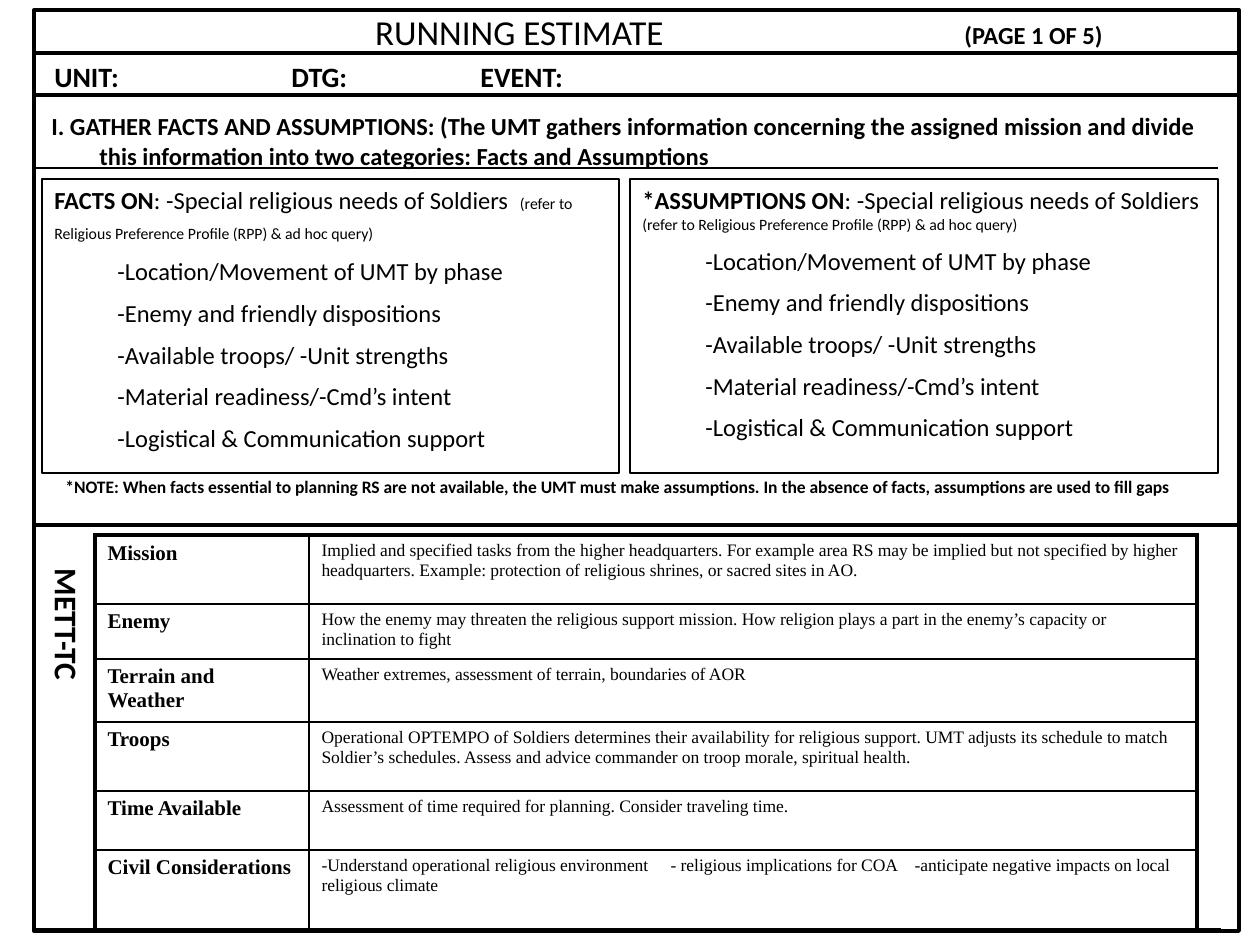
from lxml import etree
from pptx import Presentation
from pptx.dml.color import RGBColor
from pptx.enum.shapes import MSO_CONNECTOR, MSO_SHAPE
from pptx.enum.text import MSO_ANCHOR, PP_ALIGN
from pptx.oxml.ns import qn
from pptx.util import Emu, Pt

RECT = MSO_SHAPE.RECTANGLE
STRAIGHT = MSO_CONNECTOR.STRAIGHT
TOP, MIDDLE = MSO_ANCHOR.TOP, MSO_ANCHOR.MIDDLE
LEFT, CENTER = PP_ALIGN.LEFT, PP_ALIGN.CENTER

BLACK = RGBColor(0x00, 0x00, 0x00)
SANS, SERIF = "Calibri", "Times New Roman"
THICK, MEDIUM, THIN = 2.25, 1, 0.75
EMU_PER_PX = 914400 / 126
TITLE_ONLY = 5

NEEDS = ": -Special religious needs of Soldiers  "
SOURCE = "(refer to Religious Preference Profile (RPP) & ad hoc query)"
TOPICS = [
    "-Location/Movement of UMT by phase",
    "-Enemy and friendly dispositions",
    "-Available troops/ -Unit strengths",
    "-Material readiness/-Cmd’s intent",
    "-Logistical & Communication support",
]

# Factor, guidance, row height
METT_TC = [
    ("Mission", "Implied and specified tasks from the higher headquarters. For example "
     "area RS may be implied but not specified by higher headquarters. Example: "
     "protection of religious shrines, or sacred sites in AO.", 69),
    ("Enemy", "How the enemy may threaten the religious support mission. How religion "
     "plays a part in the enemy’s capacity or inclination to fight", 55),
    ("Terrain and Weather",
     "Weather extremes, assessment of terrain, boundaries of AOR", 63),
    ("Troops", "Operational OPTEMPO of Soldiers determines their availability for "
     "religious support. UMT adjusts its schedule to match Soldier’s schedules. "
     "Assess and advice commander on troop morale, spiritual health.", 69),
    ("Time Available",
     "Assessment of time required for planning. Consider traveling time.", 59),
    ("Civil Considerations", "-Understand operational religious environment\t"
     "- religious implications for COA\t"
     "-anticipate negative impacts on local religious climate", 81),
]
COLUMNS = (214, 888)
GUIDANCE_TABS = (349, 593)


def px(n):
    return Emu(round(n * EMU_PER_PX))


def box(*lengths):
    return [px(n) for n in lengths]


def style(font, size, bold=False, name=SANS):
    font.name, font.size, font.bold = name, Pt(size), bold
    font.color.rgb = BLACK


def add_run(p, text, size, bold=False):
    r = p.add_run()
    r.text = text
    style(r.font, size, bold)


def add_text(slide, text, at, size, wrap=True, hanging=0):
    sp = slide.shapes.add_textbox(*box(*at))
    sp.text_frame.word_wrap = wrap
    p = sp.text_frame.paragraphs[0]
    p.text = text
    style(p.font, size, bold=True)
    if hanging:
        pPr = p._p.get_or_add_pPr()
        pPr.set("marL", str(px(hanging)))
        pPr.set("indent", str(px(-hanging)))
    return sp


def add_frame(slide, at, width):
    sp = slide.shapes.add_shape(RECT, *box(*at))
    sp.shadow.inherit = False
    sp.fill.background()
    sp.line.color.rgb = BLACK
    sp.line.width = Pt(width)
    return sp


def add_rule(slide, x1, y1, x2, y2, width=THICK):
    line = slide.shapes.add_connector(STRAIGHT, *box(x1, y1, x2, y2))
    line.line.color.rgb = BLACK
    line.line.width = Pt(width)
    etree.SubElement(line._element.spPr, qn("a:effectLst"))


def add_topic_box(slide, heading, at):
    tf = add_frame(slide, at, THIN).text_frame
    tf.word_wrap = True
    tf.vertical_anchor = TOP
    p = tf.paragraphs[0]
    p.alignment = LEFT
    add_run(p, heading, 14, bold=True)
    add_run(p, NEEDS, 14)
    add_run(p, SOURCE, 9)
    for topic in TOPICS:
        p = tf.add_paragraph()
        p.text = "\t" + topic
        p.alignment = LEFT
        p.space_before = Pt(7)
        style(p.font, 14)
    return tf


def set_borders(cell, widths):
    tcPr = cell._tc.get_or_add_tcPr()
    for i, (side, width) in enumerate(zip("LRTB", widths)):
        ln = etree.Element(qn(f"a:ln{side}"), w=str(Pt(width)))
        fill = etree.SubElement(ln, qn("a:solidFill"))
        etree.SubElement(fill, qn("a:srgbClr"), val=str(BLACK))
        tcPr.insert(i, ln)


def set_tabs(p, stops):
    tabs = etree.SubElement(p._p.get_or_add_pPr(), qn("a:tabLst"))
    for stop in stops:
        etree.SubElement(tabs, qn("a:tab"), pos=str(px(stop)), algn="l")


def add_factor_table(slide, left, top):
    height = sum(row[2] for row in METT_TC)
    frame = slide.shapes.add_table(len(METT_TC), len(COLUMNS),
                                   *box(left, top, sum(COLUMNS), height))
    table = frame.table
    table.first_row = table.horz_banding = False
    for column, width in zip(table.columns, COLUMNS):
        column.width = px(width)
    last = len(METT_TC) - 1
    for i, (factor, guidance, row_height) in enumerate(METT_TC):
        table.rows[i].height = px(row_height)
        for j, text in enumerate((factor, guidance)):
            cell = table.cell(i, j)
            cell.fill.background()
            p = cell.text_frame.paragraphs[0]
            p.text = text
            if "\t" in text:
                set_tabs(p, GUIDANCE_TABS)
            style(p.font, 10 if j else 12, bold=j == 0, name=SERIF)
            outer = (j == 0, j == 1, i == 0, i == last)
            set_borders(cell, [THICK if edge else MEDIUM for edge in outer])


def add_title(slide):
    title = slide.shapes.title
    title.left, title.top, title.width, title.height = box(94, 0, 851, 63)
    title.text_frame.vertical_anchor = MIDDLE
    p = title.text_frame.paragraphs[0]
    p.text = "RUNNING ESTIMATE"
    p.alignment = CENTER
    style(p.font, 20)


def main():
    prs = Presentation()
    prs.slide_width, prs.slide_height = box(1260, 945)
    slide = prs.slides.add_slide(prs.slide_layouts[TITLE_ONLY])

    # Page frame and header
    add_title(slide)
    add_frame(slide, (34, 10, 1205, 921), THICK)
    add_text(slide, "(PAGE 1 OF 5)", (952, 14, 193, 43), 14, wrap=False)
    add_text(slide, "UNIT:\t\t\tDTG:\t\t\tEVENT:", (42, 53, 1176, 35), 16, hanging=48)

    # Facts and assumptions
    add_text(slide, "I. GATHER FACTS AND ASSUMPTIONS: (The UMT gathers information "
             "concerning the assigned mission and divide this information into two "
             "categories: Facts and Assumptions", (39, 105, 1179, 73), 14, hanging=48)
    facts = add_topic_box(slide, "FACTS ON", (42, 179, 577, 294))
    add_run(facts.paragraphs[0], " ", 14)
    add_topic_box(slide, "*ASSUMPTIONS ON", (630, 179, 588, 294))
    add_text(slide, "*NOTE: When facts essential to planning RS are not available, the "
             "UMT must make assumptions. In the absence of facts, assumptions are used "
             "to fill gaps", (53, 470, 1155, 55), 10)

    # METT-TC factors
    add_factor_table(slide, 95, 535)
    add_text(slide, "METT-TC", (-79, 678, 293, 50), 18).rotation = 90

    # Section rules
    for y in (53, 95, 525):
        add_rule(slide, 32, y, 1239, y)
    add_rule(slide, 32, 168, 1218, 168, THIN)
    add_rule(slide, 34, 930, 1221, 930)

    prs.save("out.pptx")


if __name__ == "__main__":
    main()
